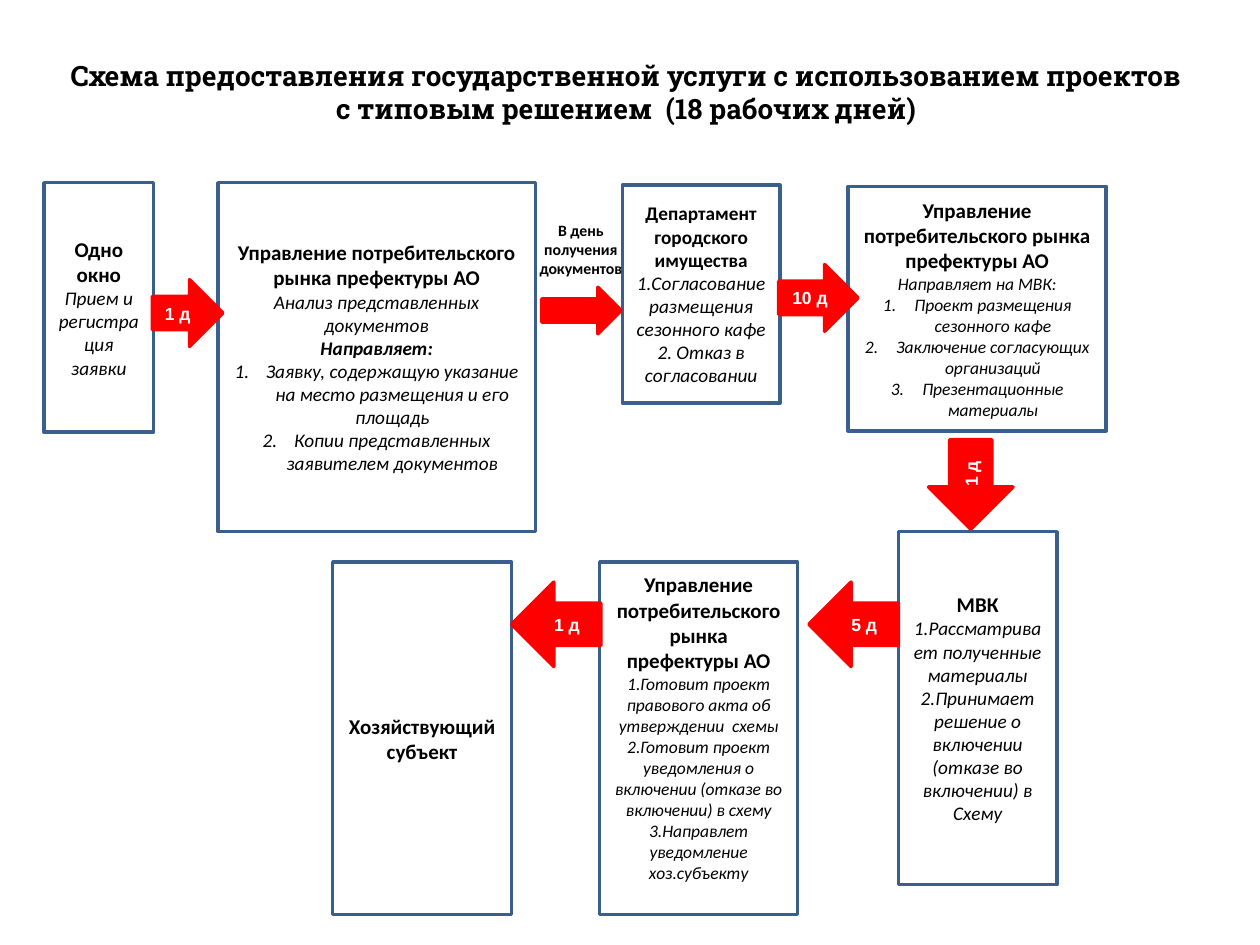
import pptx
import pptx.util
from lxml import etree
from pptx.dml.color import RGBColor
from pptx.enum.shapes import MSO_SHAPE
from pptx.enum.text import MSO_ANCHOR, PP_ALIGN
from pptx.oxml.ns import qn

PX = 9144  # 100 px to the inch
BLACK = RGBColor(0x00, 0x00, 0x00)
WHITE = RGBColor(0xFF, 0xFF, 0xFF)
BLUE = RGBColor(0x3A, 0x5F, 0x8C)
RED = RGBColor(0xFF, 0x00, 0x00)

OFFICE = "Управление потребительского рынка префектуры АО"
RIGHT, LEFT = MSO_SHAPE.RIGHT_ARROW, MSO_SHAPE.LEFT_ARROW


def px(*values):
    return [v * PX for v in values]


def write(tf, i, text, size, font="Calibri", color=BLACK, bold=False, italic=False,
          align=PP_ALIGN.CENTER):
    """Fill paragraph i of a text frame, adding it when it is not the first."""
    p = tf.add_paragraph() if i else tf.paragraphs[0]
    p.text = text
    p.alignment = align
    p.font.size = pptx.util.Pt(size)
    p.font.name = font
    p.font.color.rgb = color
    p.font.bold = bold
    p.font.italic = italic
    return p


def number(p):
    """Turn a paragraph into an item of a numbered list."""
    pPr = p._p.get_or_add_pPr()
    pPr.set("marL", "228600")
    pPr.set("indent", "-228600")
    bullet = etree.Element(qn("a:buAutoNum"), type="arabicPeriod")
    pPr.insert_element_before(bullet, "a:tabLst", "a:defRPr", "a:extLst")


def add_shape(s, kind, box, fill, line):
    sp = s.shapes.add_shape(kind, *px(*box))
    sp.shadow.inherit = False
    sp.fill.solid()
    sp.fill.fore_color.rgb = fill
    sp.line.color.rgb = line
    sp.line.width = pptx.util.Pt(2)
    sp.text_frame.word_wrap = True
    sp.text_frame.vertical_anchor = MSO_ANCHOR.MIDDLE
    return sp


def add_label(s, box, text, size, font, anchor):
    tf = s.shapes.add_textbox(*px(*box)).text_frame
    tf.word_wrap = True
    tf.vertical_anchor = anchor
    write(tf, 0, text, size, font, bold=True)


def add_step(s, box, head, head_size, body=(), body_size=11, lift=0):
    """A step: bold heading, then italic lines marked '#' numbered or '!' bold."""
    tf = add_shape(s, MSO_SHAPE.RECTANGLE, box, WHITE, BLUE).text_frame
    tf.margin_bottom += lift * PX
    write(tf, 0, head, head_size, bold=True)
    for i, text in enumerate(body, 1):
        p = write(tf, i, text.lstrip("#!"), body_size,
                  bold=text.startswith("!"), italic=True)
        if text.startswith("#"):
            number(p)


def add_arrow(s, kind, box, text="", align=PP_ALIGN.CENTER, rotation=0):
    sp = add_shape(s, kind, box, RED, RED)
    sp.rotation = rotation
    if text:
        write(sp.text_frame, 0, text, 10, "Arial", WHITE, bold=True, align=align)


def add_upper_row(s, x, y):
    """Steps from application to the second office visit."""
    add_step(s, (x, y, 87, 198), "Одно окно", 12, ["Прием и регистрация заявки"])
    add_step(s, (x + 138, y, 252, 277), OFFICE, 12, [
        "Анализ представленных документов",
        "!Направляет:",
        "#Заявку, содержащую указание на место размещения и его площадь",
        "#Копии представленных заявителем документов"])
    add_step(s, (x + 459, y + 2, 125, 173), "Департамент городского имущества", 11, [
        "1.Согласование размещения сезонного кафе",
        "2. Отказ в согласовании"])
    add_step(s, (x + 638, y + 3, 205, 194), OFFICE, 12, [
        "Направляет на МВК:",
        "#Проект размещения сезонного кафе",
        "#Заключение согласующих организаций",
        "#Презентационные материалы"], 10)
    add_arrow(s, RIGHT, (x + 86, y + 77, 56, 53), "1 д", PP_ALIGN.LEFT)
    add_arrow(s, RIGHT, (x + 395, y + 83, 63, 37))
    add_arrow(s, RIGHT, (x + 583, y + 65, 63, 53), "10 д")
    add_label(s, (x + 379, y + 25, 94, 56), "В день получения документов", 9,
              "Calibri", MSO_ANCHOR.TOP)


def add_lower_row(s, x, y):
    """Steps from the commission back to the applicant, right to left."""
    add_step(s, (x + 449, y - 24, 126, 280), "МВК", 12, [
        "1.Рассматривает полученные материалы",
        "2.Принимает решение о включении (отказе во включении) в Схему"])
    add_step(s, (x + 212, y, 157, 280), OFFICE, 12, [
        "1.Готовит проект правового акта об утверждении  схемы",
        "2.Готовит проект уведомления о включении (отказе во включении) в схему",
        "3.Направлет уведомление хоз.субъекту"], 10, lift=17)
    add_step(s, (x, y, 142, 280), "Хозяйствующий субъект", 12)
    add_arrow(s, LEFT, (x + 471, y - 95, 71, 67), "1 д", rotation=270)
    add_arrow(s, LEFT, (x + 378, y + 16, 71, 67), "5 д")
    add_arrow(s, LEFT, (x + 142, y + 16, 71, 67), "1 д")


def main():
    prs = pptx.Presentation()
    prs.slide_width, prs.slide_height = px(1000, 750)
    s = prs.slides.add_slide(prs.slide_layouts[6])
    add_label(s, (44, 34, 906, 78),
              "Схема предоставления государственной услуги с использованием "
              "проектов с типовым решением  (18 рабочих дней)",
              16, "Roboto Slab", MSO_ANCHOR.MIDDLE)
    add_upper_row(s, 35, 145)
    add_lower_row(s, 264, 446)
    prs.save("out.pptx")


if __name__ == "__main__":
    main()
